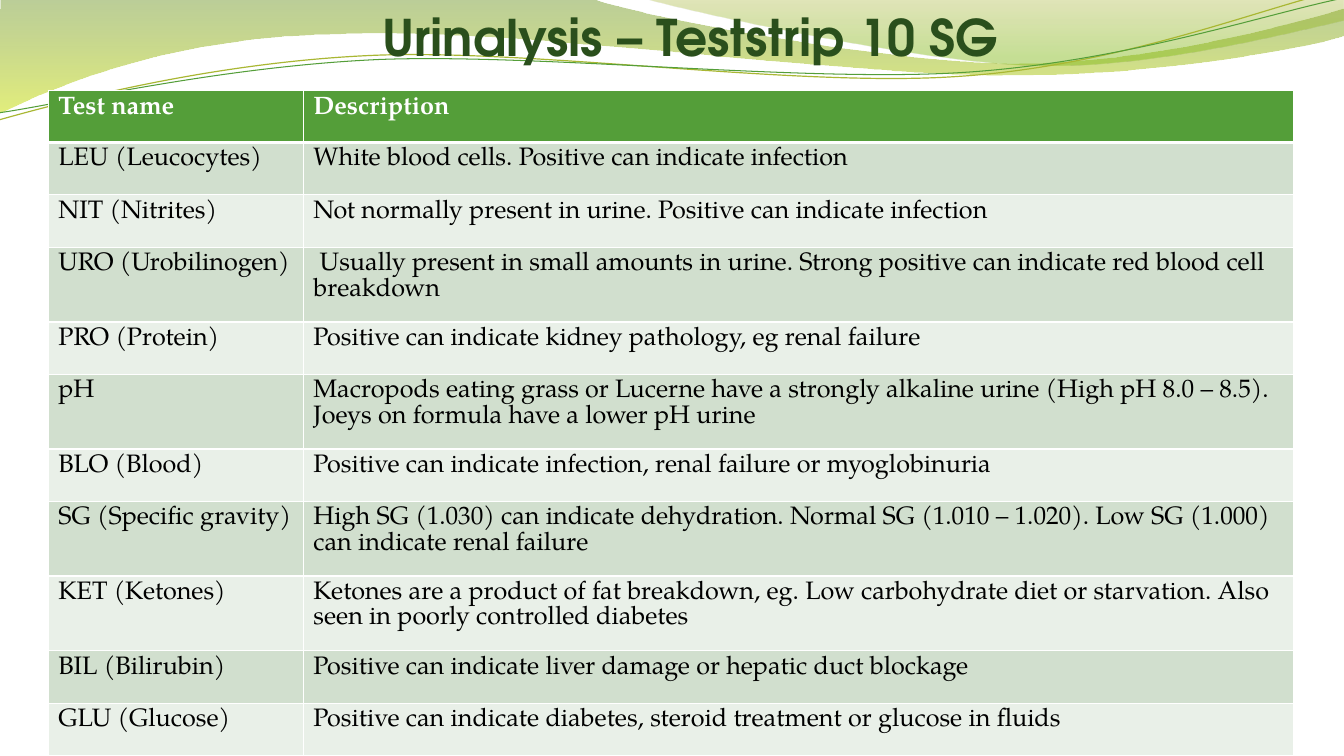
"""Build the urinalysis test strip slide: green waves, a title and a table of tests."""
import itertools
import math

import lxml.etree
import pptx
import pptx.dml.color
import pptx.enum.text
import pptx.oxml.ns
import pptx.util

Pt = pptx.util.Pt
qn = pptx.oxml.ns.qn

COLORS = {
    "white": "FFFFFF", "text": "000000", "title": "2A4F1C", "green": "549E39",
    "band": "D1DFCE", "pale": "E9F0E8", "olive": "A9B733",
    "moss": "69921C", "lime": "CCE10F", "mustard": "9BAA1A", "leaf": "81BA16",
}


def rgb(name):
    return pptx.dml.color.RGBColor.from_string(COLORS[name])


def draw_wave(start, segments, closed, tilt=0, center=(0, 0)):
    numbers = list(itertools.chain(start, *segments))
    cos, sin = math.cos(math.radians(tilt)), math.sin(math.radians(tilt))
    outline = []
    for x, y in zip(numbers[::2], numbers[1::2]):
        dx, dy = x - center[0], y - center[1]
        outline.append((Pt(center[0] + dx * cos - dy * sin),
                        Pt(center[1] + dx * sin + dy * cos)))
    builder = slide.shapes.build_freeform(*outline[0])
    builder.add_line_segments(outline[1:], close=closed)
    wave = builder.convert_to_shape()
    wave.shadow.inherit = False
    wave.rotation = -tilt % 360
    steps = iter(list(wave._element.spPr.iter(qn("a:lnTo"))))
    for segment in segments:
        first, *others = itertools.islice(steps, len(segment) // 2)
        if others:
            first.tag = qn("a:cubicBezTo")
        for other in others:
            first.append(other[0])
            other.getparent().remove(other)
    return wave


deck = pptx.Presentation()
deck.slide_width, deck.slide_height = Pt(960), Pt(540)
slide = deck.slides.add_slide(deck.slide_layouts[6])

BANDS = [
    ((0, 0), [(422.6, -0.7), (456.5, 12.2, 636.5, 45.4, 727.9, 45.4),
              (818.6, 45.4, 919.4, 18.7, 959.8, 6.5), (960.5, 25.9),
              (943.9, 31.7, 834.5, 54.7, 715.7, 54),
              (596.9, 54, 366.5, 20.2, 247, 24.5),
              (123.1, 25.9, 43.9, 59.8, -1.4, 81.4), (0, 0)],
     [(0, "moss", 45), (1, "lime", 55)]),
    ((459.4, -0.7), [(488.9, 7.9, 654.5, 44.6, 738, 46.8),
                     (820.8, 49.7, 923, 23, 959.8, 15.1), (959.8, 0), (459.4, -0.7)],
     [(0, "mustard", 30), (0.8, "leaf", 45)]),
]
for start, segments, stops in BANDS:
    band = draw_wave(start, segments, True)
    band.line.fill.background()
    band.fill.gradient()
    band.fill.gradient_angle = 270
    for stop, (position, color, _) in zip(band.fill.gradient_stops, stops):
        stop.position = position
        stop.color.rgb = rgb(color)
    for tint, (_, _, opacity) in zip(band._element.spPr.iter(qn("a:srgbClr")), stops):
        lxml.etree.SubElement(tint, qn("a:alpha"), val=str(opacity * 1000))

STRANDS = [
    ((-0.7, 85.7), [(45.4, 72.7, 151.2, 44.6, 265.7, 39.6),
                    (379.4, 34.6, 568.1, 62.6, 683.3, 54.7),
                    (799.2, 47.5, 900.7, 5.8, 957.6, -7.2)], "olive", 0.85, (478.8, 41.4)),
    ((-0.7, 80.6), [(44.6, 74.2, 157, 47.5, 271.4, 42.5),
                    (386.6, 38.2, 573.1, 59, 687.6, 51.8),
                    (802.1, 44.6, 903.6, 10.1, 959.8, -1.4)], "green", 0.75, (480.2, 42.5)),
]
for start, segments, color, width, center in STRANDS:
    strand = draw_wave(start, segments, False, 2.7, center)
    strand.fill.background()
    strand.line.color.rgb = rgb(color)
    strand.line.width = Pt(width)

TESTS = [
    ("Test name", "Description"),
    ("LEU (Leucocytes)", "White blood cells. Positive can indicate infection"),
    ("NIT (Nitrites)", "Not normally present in urine. Positive can indicate infection"),
    ("URO (Urobilinogen)", " Usually present in small amounts in urine. Strong positive "
                           "can indicate red blood cell breakdown"),
    ("PRO (Protein)", "Positive can indicate kidney pathology, eg renal failure"),
    ("pH", "Macropods eating grass or Lucerne have a strongly alkaline urine "
           "(High pH 8.0 – 8.5). Joeys on formula have a lower pH urine"),
    ("BLO (Blood)", "Positive can indicate infection, renal failure or myoglobinuria"),
    ("SG (Specific gravity)", "High SG (1.030) can indicate dehydration. Normal SG "
                              "(1.010 – 1.020). Low SG (1.000) can indicate renal failure"),
    ("KET (Ketones)", "Ketones are a product of fat breakdown, eg. Low carbohydrate diet "
                      "or starvation. Also seen in poorly controlled diabetes"),
    ("BIL (Bilirubin)", "Positive can indicate liver damage or hepatic duct blockage"),
    ("GLU (Glucose)", "Positive can indicate diabetes, steroid treatment or glucose in fluids"),
]
tests = slide.shapes.add_table(len(TESTS), 2, Pt(34.5), Pt(64.4), Pt(889.2), Pt(475.2)).table
for column, width in zip(tests.columns, (182.2, 707)):
    column.width = Pt(width)

for row, entry in enumerate(TESTS):
    header = row == 0
    tests.rows[row].height = Pt(53.4 if len(entry[1]) > 90 else 37.4)
    fill = "green" if header else "band" if row % 2 else "pale"
    font_format = {"name": "TeX Gyre Pagella", "size": Pt(18), "bold": header}
    for column, wording in enumerate(entry):
        cell = tests.cell(row, column)
        cell.text = wording
        cell.fill.solid()
        cell.fill.fore_color.rgb = rgb(fill)
        paragraph = cell.text_frame.paragraphs[0]
        paragraph.line_spacing = Pt(18.2)
        font = paragraph.runs[0].font
        for attribute, value in font_format.items():
            setattr(font, attribute, value)
        font.color.rgb = rgb("white" if header else "text")
        properties = cell._tc.get_or_add_tcPr()
        for index, side in enumerate("LRTB"):
            thick = (header and side == "B") or (row == 1 and side == "T")
            border = lxml.etree.Element(qn(f"a:ln{side}"), w=str(Pt(3 if thick else 1)))
            solid = lxml.etree.SubElement(border, qn("a:solidFill"))
            lxml.etree.SubElement(solid, qn("a:srgbClr"), val=COLORS["white"])
            properties.insert(index, border)

title = slide.shapes.add_textbox(Pt(272.9), Pt(-5), Pt(464.4), Pt(52.6)).text_frame
title_format = {
    "word_wrap": True, "vertical_anchor": pptx.enum.text.MSO_ANCHOR.BOTTOM,
    "margin_left": 0, "margin_top": Pt(3.6), "margin_right": 0, "margin_bottom": 0,
}
for attribute, value in title_format.items():
    setattr(title, attribute, value)
heading = title.paragraphs[0].add_run()
heading.text = "Urinalysis – Teststrip 10 SG"
heading_format = {"name": "TeX Gyre Adventor", "size": Pt(36), "bold": True}
for attribute, value in heading_format.items():
    setattr(heading.font, attribute, value)
heading.font.color.rgb = rgb("title")

deck.save("out.pptx")
